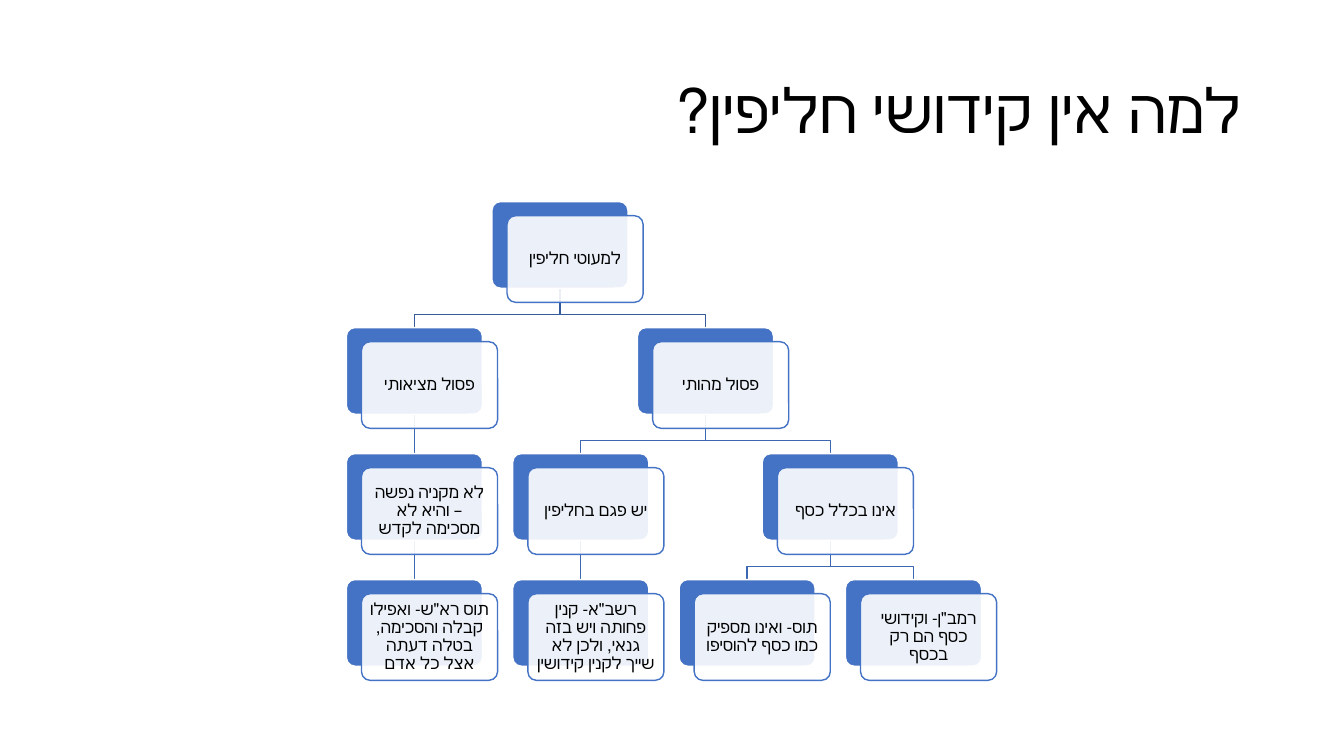
from dataclasses import dataclass, field
from itertools import count

from lxml.etree import SubElement
from pptx import Presentation
from pptx.dml.color import RGBColor
from pptx.enum.shapes import MSO_CONNECTOR, MSO_SHAPE
from pptx.enum.text import MSO_ANCHOR, PP_ALIGN
from pptx.oxml.ns import qn
from pptx.util import Inches, Pt

# Content: each node is (text, children), children from left to right
TITLE = "למה אין קידושי חליפין?"
TREE = ("למעוטי חליפין", [
    ("פסול מציאותי", [
        ("לא מקניה נפשה – והיא לא מסכימה לקדש", [
            ("תוס רא\"ש- ואפילו קבלה והסכימה, בטלה דעתה אצל כל אדם", []),
        ]),
    ]),
    ("פסול מהותי", [
        ("יש פגם בחליפין", [
            ("רשב\"א- קנין פחותה ויש בזה גנאי, ולכן לא שייך לקנין קידושין", []),
        ]),
        ("אינו בכלל כסף", [
            ("תוס- ואינו מספיק כמו כסף להוסיפו", []),
            ("רמב\"ן- וקידושי כסף הם רק בכסף", []),
        ]),
    ]),
])


@dataclass(frozen=True)
class Theme:
    font: str = "Calibri"
    title_size: int = 44
    card_size: int = 12
    text: str = "000000"
    paper: str = "FFFFFF"
    accent: str = "4472C4"
    top_link: str = "365B9D"
    link: str = "3E67B2"
    front_alpha: int = 90000


THEME = Theme()

# Grid, in inches
FIRST_CENTRE, COLUMN = 4.11, 1.65
FIRST_TOP, ROW = 2.0, 1.25
CARD_WIDTH, CARD_HEIGHT = 1.35, 0.86
FRONT_SHIFT = 0.15, 0.14
BEND = 2 / 3  # share of the gap above the horizontal part of a link


@dataclass
class Node:
    text: str
    level: int
    children: list
    centre: float
    card: object = field(default=None)

    @property
    def top(self):
        return FIRST_TOP + self.level * ROW

    @property
    def bottom(self):
        return self.top + CARD_HEIGHT


def colour(value):
    return RGBColor.from_string(value)


def place(branch, leaf_columns, level=0):
    """Leaves take columns in turn; a parent sits midway over its children."""
    text, branches = branch
    children = [place(child, leaf_columns, level + 1) for child in branches]
    if children:
        centre = (children[0].centre + children[-1].centre) / 2
    else:
        centre = FIRST_CENTRE + next(leaf_columns) * COLUMN
    return Node(text, level, children, centre)


def walk(node):
    yield node
    for child in node.children:
        yield from walk(child)


def write(shape, text, size, alignment, inset):
    frame = shape.text_frame
    frame.word_wrap = True
    frame.vertical_anchor = MSO_ANCHOR.MIDDLE
    frame.margin_left = frame.margin_right = Inches(inset)
    frame.margin_top = frame.margin_bottom = Inches(0.05)
    paragraph = frame.paragraphs[0]
    paragraph.text = text
    paragraph.alignment = alignment
    paragraph.line_spacing = 0.9
    paragraph.font.size = Pt(size)
    paragraph.font.name = THEME.font
    paragraph.font.color.rgb = colour(THEME.text)
    return paragraph


def add_card(slide, node, shift, fill, line):
    shape = slide.shapes.add_shape(
        MSO_SHAPE.ROUNDED_RECTANGLE,
        Inches(node.centre - CARD_WIDTH / 2 + shift[0]), Inches(node.top + shift[1]),
        Inches(CARD_WIDTH), Inches(CARD_HEIGHT))
    shape.adjustments[0] = 0.1
    shape.shadow.inherit = False
    shape.fill.solid()
    shape.fill.fore_color.rgb = colour(fill)
    shape.line.color.rgb = colour(line)
    shape.line.width = Pt(1)
    return shape


def add_link(slide, parent, child):
    """Return a straight connector, or None where a bent outline is drawn."""
    points = [(Inches(x), Inches(y)) for x, y in (
        (parent.centre, parent.bottom),
        (parent.centre, parent.bottom + BEND * (child.top - parent.bottom)),
        (child.centre, parent.bottom + BEND * (child.top - parent.bottom)),
        (child.centre, child.top))]
    straight = len(parent.children) == 1
    if straight:
        link = slide.shapes.add_connector(MSO_CONNECTOR.STRAIGHT, *points[0], *points[-1])
        SubElement(link._element.spPr, qn("a:effectLst"))
    else:
        builder = slide.shapes.build_freeform(*points[0])
        builder.add_line_segments(points[1:], close=False)
        link = builder.convert_to_shape()
        link.fill.background()
        link.shadow.inherit = False
    link.line.color.rgb = colour(THEME.link if parent.level else THEME.top_link)
    link.line.width = Pt(1)
    return link if straight else None


def main():
    presentation = Presentation()
    presentation.slide_width, presentation.slide_height = Inches(13.33), Inches(7.5)
    slide = presentation.slides.add_slide(presentation.slide_layouts[6])

    # Title, right to left
    title = slide.shapes.add_textbox(Inches(0.92), Inches(0.4), Inches(11.5), Inches(1.45))
    paragraph = write(title, TITLE, THEME.title_size, PP_ALIGN.RIGHT, 0.1)
    paragraph._p.get_or_add_pPr().set("rtl", "1")

    # Links lie behind the cards
    nodes = list(walk(place(TREE, count())))
    links = [(add_link(slide, parent, child), parent, child)
             for parent in nodes for child in parent.children]

    # Cards: a solid back and a translucent front that holds the text
    for node in nodes:
        node.card = add_card(slide, node, (0, 0), THEME.accent, THEME.paper)
        front = add_card(slide, node, FRONT_SHIFT, THEME.paper, THEME.accent)
        front_colour = front._element.spPr.find(qn("a:solidFill"))[0]
        SubElement(front_colour, qn("a:alpha"), val=str(THEME.front_alpha))
        write(front, node.text, THEME.card_size, PP_ALIGN.CENTER, 0.05)

    # Join the straight links to the back cards
    for link, parent, child in links:
        if link is not None:
            link.begin_connect(parent.card, 2)
            link.end_connect(child.card, 0)

    presentation.save("out.pptx")


if __name__ == "__main__":
    main()
